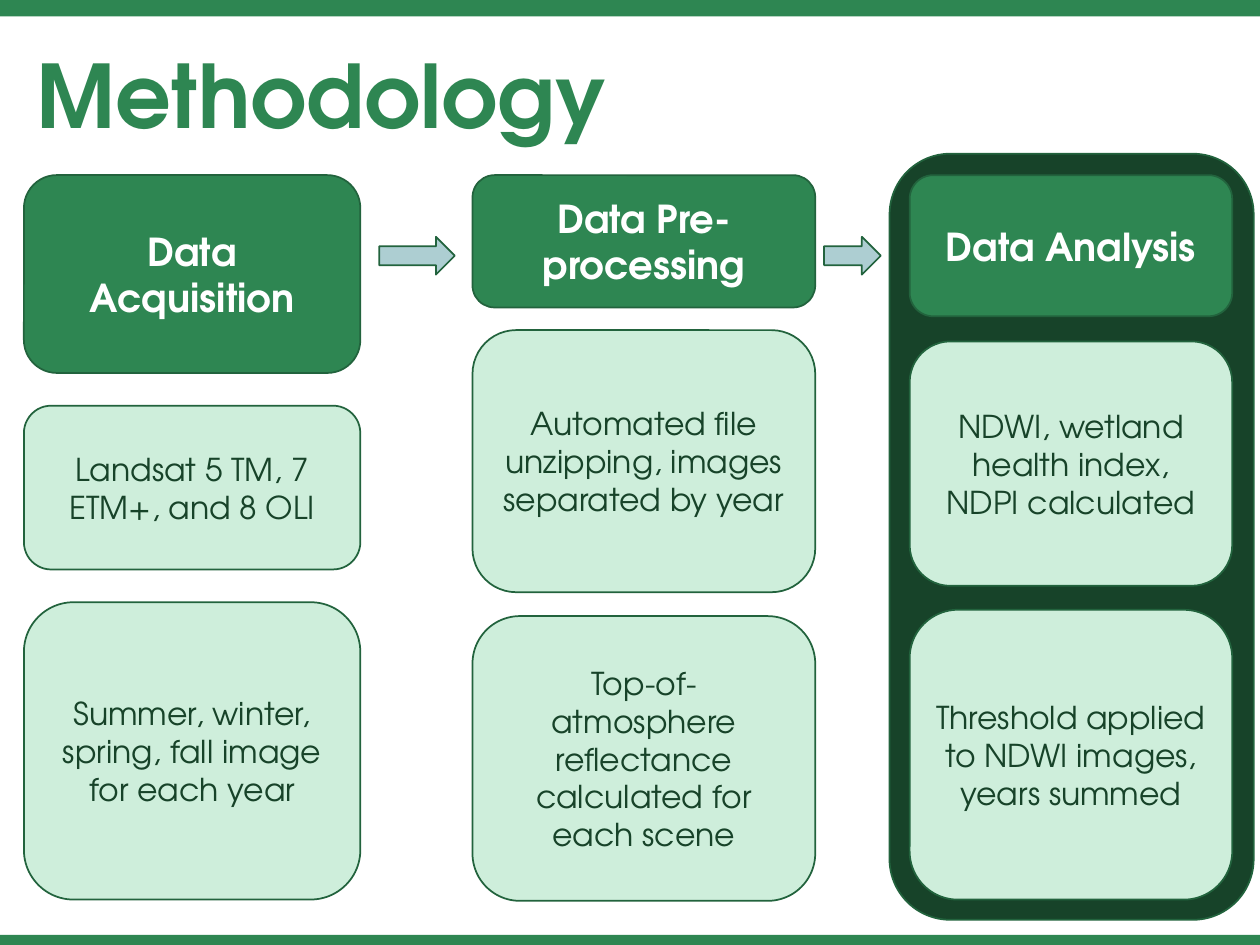
from pptx import Presentation
from pptx.dml.color import RGBColor
from pptx.enum.shapes import MSO_SHAPE
from pptx.enum.text import MSO_ANCHOR, PP_ALIGN
from pptx.util import Inches, Pt

RECT = MSO_SHAPE.RECTANGLE
ROUND = MSO_SHAPE.ROUNDED_RECTANGLE
ARROW = MSO_SHAPE.RIGHT_ARROW
MIDDLE, BOTTOM = MSO_ANCHOR.MIDDLE, MSO_ANCHOR.BOTTOM
LEFT, CENTER = PP_ALIGN.LEFT, PP_ALIGN.CENTER

THEME = {
    "font": "TeX Gyre Adventor",
    "green": RGBColor.from_string("2E8652"),
    "dark": RGBColor.from_string("174329"),
    "edge": RGBColor.from_string("22633D"),
    "pale": RGBColor.from_string("CEEEDB"),
    "blue": RGBColor.from_string("ADCED2"),
    "white": RGBColor.from_string("FFFFFF"),
    "title": Pt(50),
    "head": Pt(22),
    "body": Pt(18),
}

prs = Presentation()
prs.slide_width, prs.slide_height = Inches(10), Inches(7.5)
slide = prs.slides.add_slide(prs.slide_layouts[6])


def draw(kind, left, top, width, height, fill, edge=True):
    shape = slide.shapes.add_shape(
        kind, Inches(left), Inches(top), Inches(width), Inches(height))
    shape.shadow.inherit = False
    shape.fill.solid()
    shape.fill.fore_color.rgb = THEME[fill]
    if edge:
        shape.line.color.rgb = THEME["edge"]
        shape.line.width = Pt(1)
    else:
        shape.line.fill.background()
    return shape


def write(shape, text, size, color, bold, align=CENTER, anchor=MIDDLE):
    frame = shape.text_frame
    frame.word_wrap = True
    frame.vertical_anchor = anchor
    para = frame.paragraphs[0]
    para.text = text
    para.alignment = align
    para.font.name = THEME["font"]
    para.font.size = THEME[size]
    para.font.color.rgb = THEME[color]
    para.font.bold = bold
    return para


for top, height in ((0, 0.13), (7.42, 0.08)):
    draw(RECT, 0, top, 10, height, "green", edge=False)

draw(ROUND, 7.06, 1.22, 2.89, 6.08, "dark")

title = slide.shapes.add_textbox(
    Inches(0.19), Inches(0.32), Inches(8.91), Inches(0.9))
para = write(title, "Methodology", "title", "green", True, LEFT, BOTTOM)
para.line_spacing = 0.9
para.space_before = Pt(10)

steps = [
    (0.19, 2.67, [
        (1.39, 1.57, "Data Acquisition"),
        (3.22, 1.3, "Landsat 5 TM, 7 ETM+, and 8 OLI"),
        (4.78, 2.36, "Summer, winter, spring, fall image for each year"),
    ]),
    (3.75, 2.72, [
        (1.39, 1.05, "Data Pre-processing"),
        (2.62, 2.08, "Automated file unzipping, images separated by year"),
        (4.89, 2.26, "Top-of-atmosphere reflectance calculated for each scene"),
    ]),
    (7.22, 2.56, [
        (1.39, 1.12, "Data Analysis"),
        (2.71, 1.94, "NDWI, wetland health index, NDPI calculated"),
        (4.84, 2.3, "Threshold applied to NDWI images, years summed"),
    ]),
]
for left, width, cards in steps:
    for row, (top, height, text) in enumerate(cards):
        head = row == 0
        card = draw(ROUND, left, top, width, height, "green" if head else "pale")
        write(card, text, "head" if head else "body",
              "white" if head else "dark", head)

for left, width in ((3.01, 0.6), (6.54, 0.45)):
    draw(ARROW, left, 1.88, width, 0.3, "blue")

prs.save("out.pptx")
